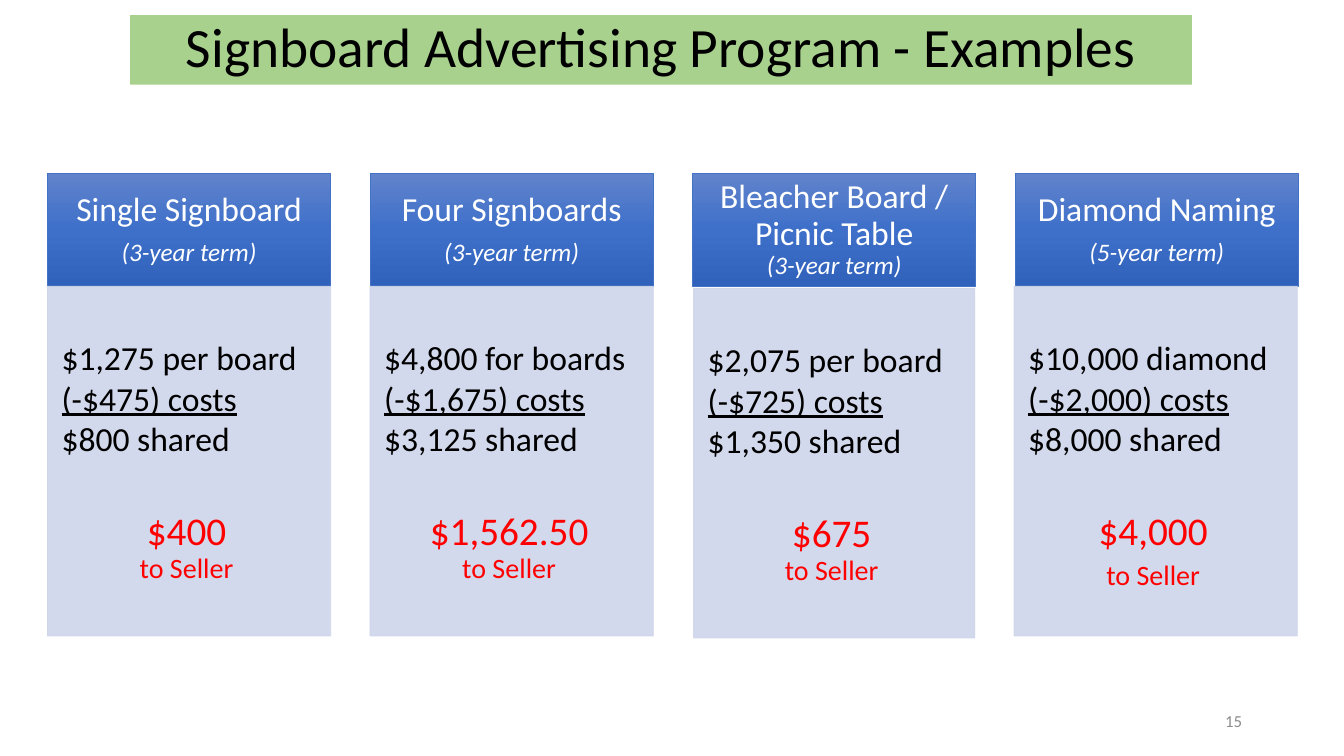
"""Build the signboard advertising slide, with lengths as percent shares of it."""
import copy
import dataclasses

import lxml.etree
import pptx
import pptx.dml.color
import pptx.enum.shapes
import pptx.enum.text
import pptx.oxml.ns
import pptx.shapes.autoshape
import pptx.text.text
import pptx.util

WIDE, HIGH = 13.33, 7.5
LEFT, STEP, SPAN = 3.53, 24, 21.08
TOP, HEAD, BODY = 22.93, 14.93, 46.27
ALIGN = pptx.enum.text.PP_ALIGN


@dataclasses.dataclass
class Card:
    title: str
    term: str
    price: str
    costs: str
    shared: str
    payout: str
    gap: float = 8.4
    tail: float = 0
    nudge: float = 0
    drop: float = 0
    trim: float = 0


CARDS = [
    Card("Single Signboard", "(3-year term)", "$1,275 per board",
         "(-$475) costs", "$800 shared", "$400"),
    Card("Four Signboards", "(3-year term)", "$4,800 for boards",
         "(-$1,675) costs", "$3,125 shared", "$1,562.50"),
    Card("Bleacher Board / Picnic Table", "(3-year term)", "$2,075 per board",
         "(-$725) costs", "$1,350 shared", "$675",
         gap=0, nudge=0.07, drop=0.26, trim=0.15),
    Card("Diamond Naming", "(5-year term)", "$10,000 diamond",
         "(-$2,000) costs", "$8,000 shared", "$4,000", tail=5, nudge=-0.08),
]


def tint(code: str) -> pptx.dml.color.RGBColor:
    """Turn a hex string into a colour."""
    return pptx.dml.color.RGBColor.from_string(code)


def box(slide, left: float, top: float, wide: float, high: float,
        inset=(0.1, 0.05, 0.1, 0.05),
        middle: bool = True) -> pptx.shapes.autoshape.Shape:
    """Add a bare rectangle placed by percent shares of the slide."""
    across, down = WIDE / 100, HIGH / 100
    shape = slide.shapes.add_shape(
        pptx.enum.shapes.MSO_SHAPE.RECTANGLE,
        *map(pptx.util.Inches,
             (left * across, top * down, wide * across, high * down)))
    shape.shadow.inherit = False
    shape.fill.background()
    shape.line.fill.background()
    frame = shape.text_frame
    frame.word_wrap = True
    anchor = pptx.enum.text.MSO_ANCHOR
    frame.vertical_anchor = anchor.MIDDLE if middle else anchor.TOP
    (frame.margin_left, frame.margin_top, frame.margin_right,
     frame.margin_bottom) = map(pptx.util.Inches, inset)
    return shape


def edge(shape: pptx.shapes.autoshape.Shape, code: str) -> None:
    """Give a shape a thin outline."""
    shape.line.color.rgb = tint(code)
    shape.line.width = pptx.util.Pt(0.5)


def say(frame: pptx.text.text.TextFrame, text: str, *, size: float,
        color: str = "000000", align=ALIGN.CENTER, slant: bool = False,
        under: bool = False, before: float = 0, after: float = 0,
        lead: float = 0.9) -> None:
    """Write one paragraph into the frame."""
    line = frame.paragraphs[0]
    if line.runs:
        line = frame.add_paragraph()
    line.alignment = align
    line.line_spacing = lead
    line.space_before = pptx.util.Pt(before)
    line.space_after = pptx.util.Pt(after)
    run = line.add_run()
    run.text = text
    font = run.font
    font.name = "Calibri"
    font.size = pptx.util.Pt(size)
    font.color.rgb = tint(color)
    font.italic = slant
    font.underline = under


def blend(shape: pptx.shapes.autoshape.Shape, codes: list[str]) -> None:
    """Fill a shape from top to bottom with evenly spaced colours."""
    shape.fill.gradient()
    shape.fill.gradient_angle = 270
    stops = next(shape._element.spPr.iter(pptx.oxml.ns.qn("a:gsLst")))
    while len(stops) < len(codes):
        stops.append(copy.deepcopy(stops[0]))
    for rank, (stop, code) in enumerate(zip(shape.fill.gradient_stops, codes)):
        stop.color.rgb = tint(code)
        stop.position = rank / (len(codes) - 1)


def fade(shape: pptx.shapes.autoshape.Shape, share: int) -> None:
    """Set the opacity of fill and outline in percent."""
    name = pptx.oxml.ns.qn
    for color in shape._element.spPr.iter(name("a:srgbClr")):
        alpha = lxml.etree.SubElement(color, name("a:alpha"))
        alpha.set("val", str(share * 1000))


def draw(slide, card: Card, left: float) -> None:
    """Draw one card with its heading and its sums."""
    head = box(slide, left, TOP, SPAN, HEAD, (0.19, 0.11, 0.19, 0.11))
    blend(head, ["6183CB", "3E70CA", "3062BB"])
    edge(head, "4472C4")
    say(head.text_frame, card.title, size=24, color="FFFFFF", after=card.gap)
    say(head.text_frame, card.term, size=18, color="FFFFFF", slant=True)

    body = box(slide, left + card.nudge, TOP + HEAD + card.drop,
               SPAN - card.trim, BODY, (0.14, 0.55, 0.19, 0.21), middle=False)
    body.fill.solid()
    body.fill.fore_color.rgb = tint("CFD5EA")
    edge(body, "CFD5EA")
    fade(body, 90)
    for text in (card.price, card.costs, card.shared):
        say(body.text_frame, text, size=24, align=ALIGN.LEFT,
            under=text == card.costs, after=3)
    say(body.text_frame, card.payout, size=28, color="FF0000",
        before=35, after=card.tail)
    say(body.text_frame, "to Seller", size=20, color="FF0000")


def main() -> None:
    """Build and save the slide."""
    deck = pptx.Presentation()
    deck.slide_width = pptx.util.Inches(WIDE)
    deck.slide_height = pptx.util.Inches(HIGH)
    slide = deck.slides.add_slide(deck.slide_layouts[6])

    title = box(slide, 9.68, 2, 79, 9.2)
    title.fill.solid()
    title.fill.fore_color.rgb = tint("A9D18E")
    say(title.text_frame, "Signboard Advertising Program - Examples", size=39.6)

    page = box(slide, 70.67, 92.67, 22.5, 5.33)
    say(page.text_frame, "15", size=12, color="8C8C8C", align=ALIGN.RIGHT,
        lead=1.0)

    for rank, card in enumerate(CARDS):
        draw(slide, card, LEFT + rank * STEP)
    deck.save("out.pptx")


if __name__ == "__main__":
    main()
